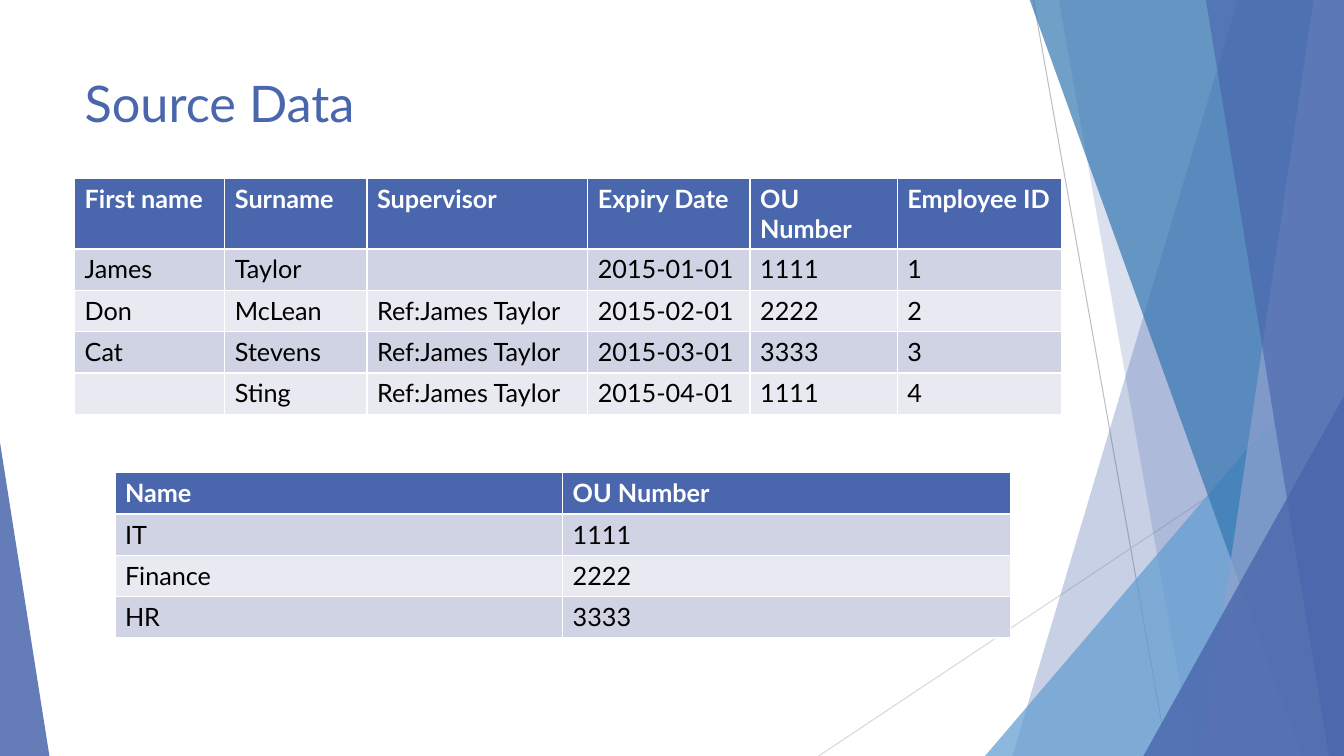
from lxml import etree
from pptx import Presentation
from pptx import util as u
from pptx.dml.color import RGBColor
from pptx.enum import shapes, text
from pptx.oxml.ns import qn

WIDTH, HEIGHT = 13.33, 7.5
BAND_TOP = -0.01
FONT = "Lato"
BLUE, WHITE, BLACK = "4A66AC", "FFFFFF", "000000"
ROW_FILLS = ["D0D3E3", "E9EAF1"]
ROW_HEIGHT = 0.41

TITLE = "Source Data"

EMPLOYEES = [
    ("First name", "Surname", "Supervisor", "Expiry Date", "OU Number", "Employee ID"),
    ("James", "Taylor", "", "2015-01-01", "1111", "1"),
    ("Don", "McLean", "Ref:James Taylor", "2015-02-01", "2222", "2"),
    ("Cat", "Stevens", "Ref:James Taylor", "2015-03-01", "3333", "3"),
    ("", "Sting", "Ref:James Taylor", "2015-04-01", "1111", "4"),
]
UNITS = [("Name", "OU Number"), ("IT", "1111"), ("Finance", "2222"), ("HR", "3333")]

# rows, left, top, column widths, header height
TABLES = [
    (EMPLOYEES, 0.74, 1.77, [1.49, 1.41, 2.19, 1.61, 1.46, 1.63], 0.68),
    (UNITS, 1.14, 4.69, [4.44, 4.44], ROW_HEIGHT),
]

# start x, start y, end x, end y, colour
THIN_LINES = [
    (10.25, 0, 11.58, HEIGHT, "BFBFBF"),
    (WIDTH, 4.03, 8.12, HEIGHT, "D9D9D9"),
]

# Back to front. band: top x, bottom x; triangle: left, top, width, apex (0 left, 1 right)
DECORATIONS = [
    ("band", (12.28, 10.04), BLUE, 30),
    ("band", (10.5, 11.83), BLUE, 20),
    ("triangle", (9.77, 3.33, 3.56, 1), "629DD1", 72),
    ("band", (10.21, 12.91), "3477B2", 70),
    ("band", (13.03, 11.92), "90A2CF", 70),
    ("band", (11.96, 13.18), BLUE, 65),
    ("triangle", (11.34, 3.93, 1.99, 1), BLUE, 80),
    ("triangle", (0, 4.39, 0.49, 0), BLUE, 85),
]


def color(value):
    return RGBColor.from_string(value)


def style_runs(frame, size, value, bold=False):
    for paragraph in frame.paragraphs:
        for run in paragraph.runs:
            run.font.name = FONT
            run.font.size = u.Pt(size)
            run.font.bold = bold
            run.font.color.rgb = color(value)


def add_thin_line(slide, x1, y1, x2, y2, value):
    line = slide.shapes.add_connector(
        shapes.MSO_CONNECTOR.STRAIGHT, *map(u.Inches, (x1, y1, x2, y2)))
    line.line.color.rgb = color(value)
    line.line.width = u.Pt(0.75)
    etree.SubElement(line._element.spPr, qn("a:effectLst"))


def add_band(slide, top_x, bottom_x):
    corners = [(top_x, BAND_TOP), (WIDTH, BAND_TOP), (WIDTH, HEIGHT), (bottom_x, HEIGHT)]
    points = [(u.Inches(x), u.Inches(y)) for x, y in corners]
    builder = slide.shapes.build_freeform(*points[0])
    builder.add_line_segments(points[1:], close=True)
    return builder.convert_to_shape()


def add_triangle(slide, left, top, width, apex):
    shape = slide.shapes.add_shape(
        shapes.MSO_SHAPE.ISOSCELES_TRIANGLE,
        *map(u.Inches, (left, top, width, HEIGHT - top)))
    shape.adjustments[0] = apex
    return shape


def add_decoration(slide, kind, geometry, value, opacity):
    draw = add_band if kind == "band" else add_triangle
    shape = draw(slide, *geometry)
    shape.shadow.inherit = False
    shape.line.fill.background()
    shape.fill.solid()
    shape.fill.fore_color.rgb = color(value)
    fill_color = shape._element.spPr.find(qn("a:solidFill"))[0]
    etree.SubElement(fill_color, qn("a:alpha"), val=str(opacity * 1000))


def add_data_table(slide, rows, left, top, widths, header_height):
    heights = [header_height] + [ROW_HEIGHT] * (len(rows) - 1)
    table = slide.shapes.add_table(
        len(rows), len(widths),
        *map(u.Inches, (left, top, sum(widths), sum(heights)))).table
    for column, width in zip(table.columns, widths):
        column.width = u.Inches(width)
    for r, values in enumerate(rows):
        table.rows[r].height = u.Inches(heights[r])
        header = r == 0
        for c, value in enumerate(values):
            cell = table.cell(r, c)
            cell.fill.solid()
            cell.fill.fore_color.rgb = color(BLUE if header else ROW_FILLS[(r - 1) % 2])
            cell.text_frame.text = value
            style_runs(cell.text_frame, 18, WHITE if header else BLACK, header)


def main():
    presentation = Presentation()
    presentation.slide_width = u.Inches(WIDTH)
    presentation.slide_height = u.Inches(HEIGHT)
    slide = presentation.slides.add_slide(presentation.slide_layouts[5])

    # Background decoration
    for line in THIN_LINES:
        add_thin_line(slide, *line)
    for decoration in DECORATIONS:
        add_decoration(slide, *decoration)

    # Title
    title = slide.shapes.title
    title.left, title.top, title.width, title.height = map(
        u.Inches, (0.74, 0.67, 9.4, 1.44))
    frame = title.text_frame
    frame.text = TITLE
    frame.vertical_anchor = text.MSO_ANCHOR.TOP
    frame.paragraphs[0].alignment = text.PP_ALIGN.LEFT
    style_runs(frame, 36, BLUE)

    # Tables
    for table in TABLES:
        add_data_table(slide, *table)

    presentation.save("out.pptx")


if __name__ == "__main__":
    main()
